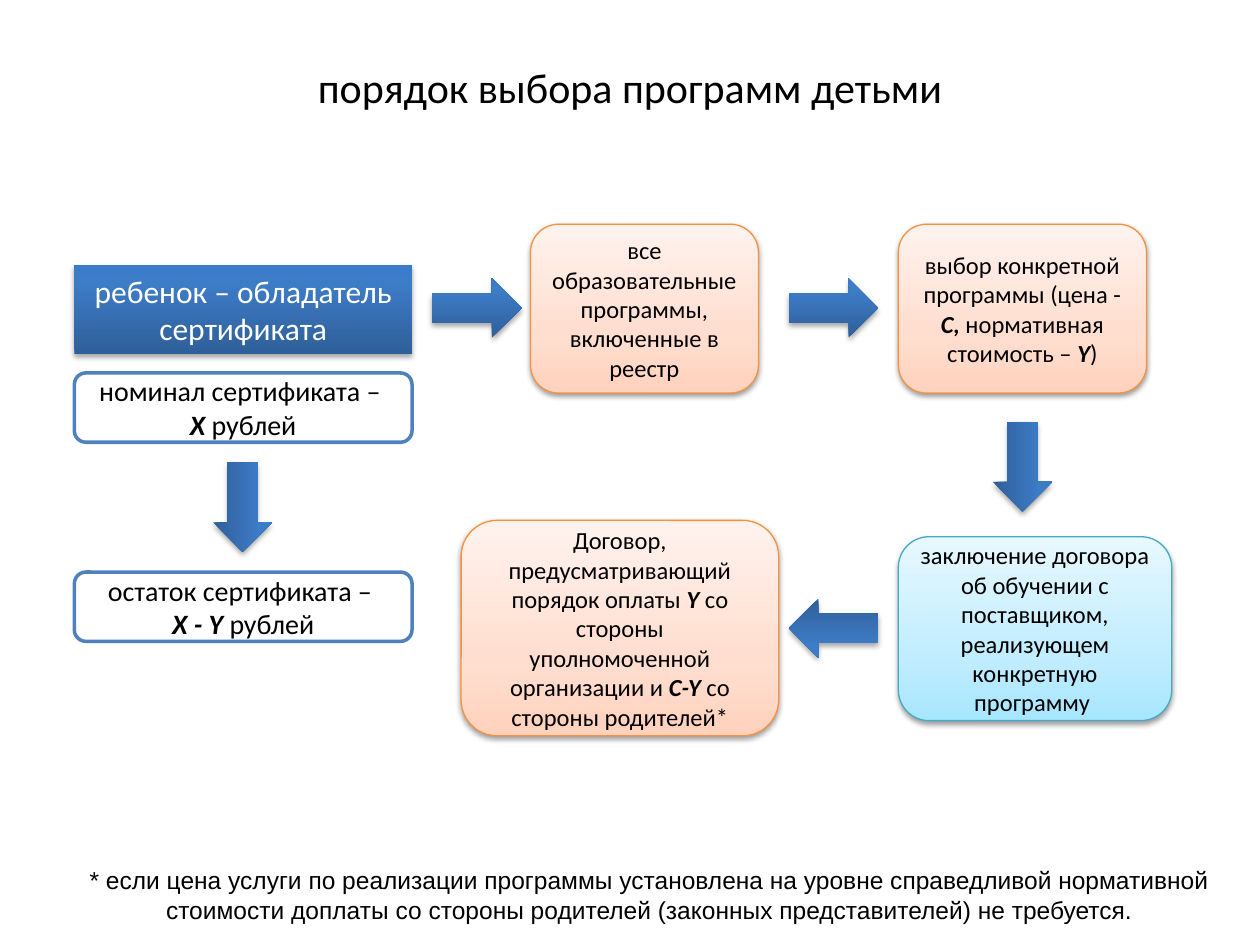
from dataclasses import dataclass
from typing import NamedTuple

from lxml import etree
from pptx import Presentation
from pptx.dml.color import RGBColor
from pptx.enum.shapes import MSO_SHAPE
from pptx.enum.text import MSO_ANCHOR, PP_ALIGN
from pptx.oxml import parse_xml
from pptx.util import Pt

RECTANGLE = MSO_SHAPE.RECTANGLE
ROUNDED = MSO_SHAPE.ROUNDED_RECTANGLE
ARROW = MSO_SHAPE.RIGHT_ARROW
CENTER = PP_ALIGN.CENTER
MIDDLE = MSO_ANCHOR.MIDDLE
TOP = MSO_ANCHOR.TOP

PX = 9144
DRAWING = "http://schemas.openxmlformats.org/drawingml/2006/main"
RIGHT, DOWN, LEFT = 0, 90, 180


class Box(NamedTuple):
    """A rectangle in px."""

    left: int
    top: int
    width: int
    height: int

    def inner(self, left, top, width, height):
        """Return a box placed relative to this one."""
        return Box(self.left + left, self.top + top, width, height)

    def emu(self):
        """Return the four lengths in EMU."""
        return [length * PX for length in self]


@dataclass(frozen=True)
class Style:
    """The look of one kind of shape."""

    stops: tuple
    line: str = ""
    line_width: float = 0.75
    shadow_alpha: int = 0
    shadow_distance: int = 0


@dataclass(frozen=True)
class Theme:
    """Colours, fonts and type sizes of the slide."""

    font: str = "Calibri"
    note_font: str = "Arial"
    dark: str = "000000"
    light: str = "FFFFFF"
    title_size: int = 24
    header_size: int = 18
    amount_size: int = 16
    text_size: int = 14
    blue: Style = Style(((0, "2F5F99"), (80, "3D7CC7"), (100, "3A7CCB")),
                        shadow_alpha=35, shadow_distance=23000)
    orange: Style = Style(((0, "FFD2BD"), (35, "FFDED0"), (100, "FFF2ED")),
                          "F69240", shadow_alpha=38, shadow_distance=20000)
    cyan: Style = Style(((0, "A7E6FF"), (35, "C1EDFF"), (100, "E7F8FF")),
                        "46AAC5", shadow_alpha=38, shadow_distance=20000)
    outline: Style = Style(((0, "FFFFFF"),), "4F81BD", 2)


THEME = Theme()


def write_text(frame, text, size, color=THEME.dark, font=THEME.font, anchor=MIDDLE):
    """Write centred lines, with the parts between underscores in bold italic."""
    frame.word_wrap = True
    frame.vertical_anchor = anchor
    for index, line in enumerate(text.split("\n")):
        para = frame.add_paragraph() if index else frame.paragraphs[0]
        para.alignment = CENTER
        para.font.name = font
        para.font.size = Pt(size)
        para.font.color.rgb = RGBColor.from_string(color)
        for part, words in enumerate(line.split("_")):
            span = para.add_run()
            span.text = words
            if part % 2:
                span.font.bold = span.font.italic = True


def fill_gradient(shape, stops):
    """Fill a shape with a gradient that runs from bottom to top."""
    shape.fill.gradient()
    gradient = shape.fill._xPr.find(f"{{{DRAWING}}}gradFill")
    stop_xml = "".join(
        f'<a:gs pos="{place * 1000}"><a:srgbClr val="{color}"/></a:gs>'
        for place, color in stops)
    gradient.getparent().replace(gradient, parse_xml(
        f'<a:gradFill xmlns:a="{DRAWING}" rotWithShape="1"><a:gsLst>{stop_xml}'
        '</a:gsLst><a:lin ang="16200000" scaled="0"/></a:gradFill>'))


def add_shadow(shape, style):
    """Give a shape a soft shadow below it."""
    effects = shape._element.spPr.find(f"{{{DRAWING}}}effectLst")
    shadow = etree.SubElement(
        effects, f"{{{DRAWING}}}outerShdw", blurRad="40000",
        dist=str(style.shadow_distance), dir="5400000", rotWithShape="0")
    color = etree.SubElement(shadow, f"{{{DRAWING}}}srgbClr", val=THEME.dark)
    etree.SubElement(color, f"{{{DRAWING}}}alpha", val=str(style.shadow_alpha * 1000))


def add_shape(page, kind, box, style):
    """Add a preset shape in the given style."""
    shape = page.shapes.add_shape(kind, *box.emu())
    shape.shadow.inherit = False
    if len(style.stops) > 1:
        fill_gradient(shape, style.stops)
    else:
        shape.fill.solid()
        shape.fill.fore_color.rgb = RGBColor.from_string(style.stops[0][1])
    if style.line:
        shape.line.color.rgb = RGBColor.from_string(style.line)
        shape.line.width = Pt(style.line_width)
    else:
        shape.line.fill.background()
    if style.shadow_alpha:
        add_shadow(shape, style)
    return shape


def add_arrow(page, box, center_x, center_y, turn):
    """Add a block arrow around a centre inside the box."""
    arrow = add_shape(page, ARROW, box.inner(center_x - 35, center_y - 23, 71, 47),
                      THEME.blue)
    arrow.rotation = turn


def add_title(page, box):
    """Place the title."""
    title = page.shapes.title
    title.left, title.top, title.width, title.height = box.emu()
    write_text(title.text_frame, "порядок выбора программ детьми", THEME.title_size)


def add_certificate(page, box):
    """Place the column on the child's certificate."""
    header = add_shape(page, RECTANGLE, box.inner(0, 0, box.width, 71), THEME.blue)
    write_text(header.text_frame, "ребенок – обладатель сертификата",
               THEME.header_size, THEME.light)
    amounts = ((86, "номинал сертификата – \n_X _рублей"),
               (244, "остаток сертификата – \n_X - Y _рублей"))
    for top, text in amounts:
        amount = add_shape(page, ROUNDED, box.inner(0, top, box.width, 55), THEME.outline)
        write_text(amount.text_frame, text, THEME.amount_size)
    add_arrow(page, box, box.width // 2 - 1, 192, DOWN)


def add_flow(page, box):
    """Place the steps from the register to the contract."""
    steps = (
        ((78, 0, 181, 134), THEME.orange,
         "все образовательные программы, включенные в реестр"),
        ((370, 0, 197, 134), THEME.orange,
         "выбор конкретной программы (цена - _C, _нормативная стоимость – _Y_)"),
        ((370, 248, 217, 146), THEME.cyan,
         "заключение договора об обучении с поставщиком, реализующем "
         "конкретную программу "),
        ((23, 235, 252, 171), THEME.orange,
         "Договор, предусматривающий порядок оплаты _Y _со стороны "
         "уполномоченной организации и _C-Y _со стороны родителей*"),
    )
    for place, style, text in steps:
        step = add_shape(page, ROUNDED, box.inner(*place), style)
        write_text(step.text_frame, text, THEME.text_size)
    for arrow in ((35, 66, RIGHT), (318, 66, RIGHT), (468, 192, DOWN), (318, 320, LEFT)):
        add_arrow(page, box, *arrow)


def add_note(page, box):
    """Place the footnote."""
    note = page.shapes.add_textbox(*box.emu())
    write_text(note.text_frame,
               "* если цена услуги по реализации программы установлена на уровне "
               "справедливой нормативной стоимости доплаты со стороны родителей "
               "(законных представителей) не требуется.",
               THEME.text_size, font=THEME.note_font, anchor=TOP)


def main():
    """Build the deck and save it."""
    deck = Presentation()
    deck.slide_width, deck.slide_height = 1000 * PX, 750 * PX
    page = deck.slides.add_slide(deck.slide_layouts[5])
    add_title(page, Box(50, 30, 900, 77))
    add_certificate(page, Box(59, 210, 268, 299))
    add_flow(page, Box(343, 178, 587, 406))
    add_note(page, Box(51, 682, 929, 57))
    deck.save("out.pptx")


if __name__ == "__main__":
    main()
